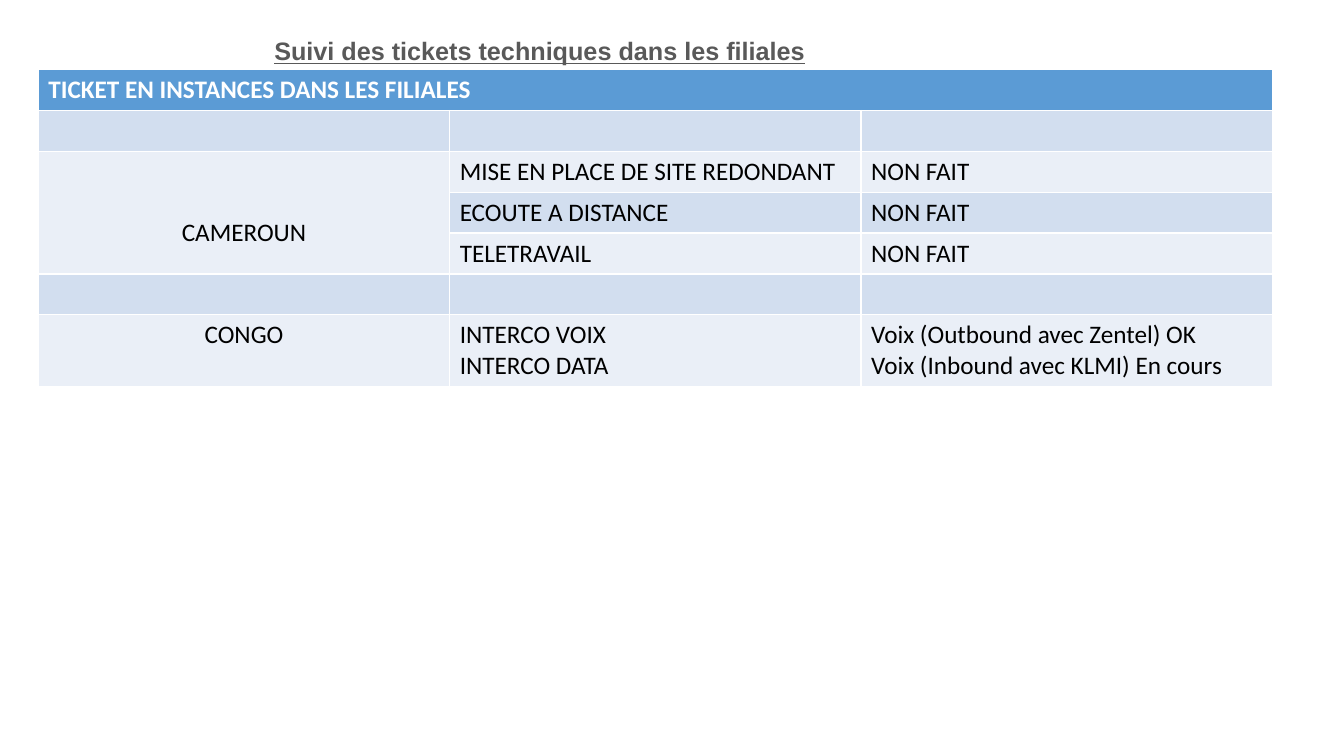
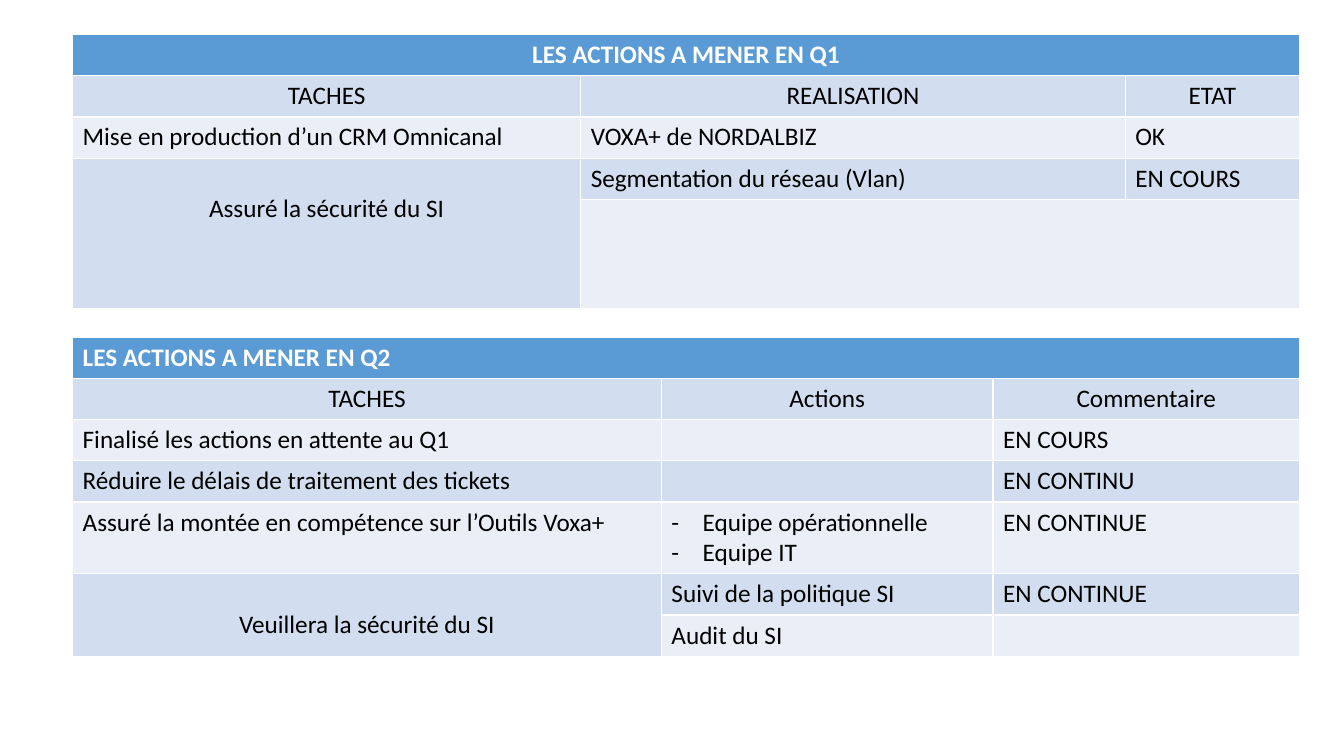
from dataclasses import dataclass
from lxml.etree import SubElement
from pptx import Presentation
from pptx.dml.color import RGBColor
from pptx.enum.text import MSO_ANCHOR, PP_ALIGN
from pptx.oxml.ns import qn
from pptx.util import Inches, Pt


@dataclass(frozen=True)
class Theme:
    """Hold the shared colours, fonts and sizes."""
    head: str = "5B9BD5"
    bands: tuple = ("EAEFF7", "D2DEEF")
    light: str = "FFFFFF"
    dark: str = "000000"
    grey: str = "595959"
    body: str = "Calibri"
    title: str = "Arial"
    size: float = 18
    pad: float = 0.05
    line: float = 0.305
    hang: float = 0.31


THEME = Theme()

SLIDES = [
    {
        "title": "Suivi des tickets techniques dans les filiales",
        "grids": [{
            "at": (0.38, 0.69),
            "cols": [4.08] * 3,
            "tall": [0.4] * 6 + [0.7],
            "rows": [
                ["TICKET EN INSTANCES DANS LES FILIALES", "", ""],
                ["", "", ""],
                ["CAMEROUN", "MISE EN PLACE DE SITE REDONDANT", "NON FAIT"],
                ["", "ECOUTE A DISTANCE", "NON FAIT"],
                ["", "TELETRAVAIL", "NON FAIT"],
                ["", "", ""],
                ["CONGO", "INTERCO VOIX\nINTERCO DATA",
                 "Voix (Outbound avec Zentel) OK\nVoix (Inbound avec KLMI) En cours"],
            ],
            "spans": [(0, 0, 0, 2), (2, 0, 4, 0)],
            "mid": [(2, 0), (6, 0)],
            "drop": {(2, 0): 2},
        }],
    },
    {
        "title": None,
        "grids": [
            {
                "at": (0.72, 0.34),
                "cols": [5.04, 5.4, 1.73],
                "tall": [0.41] * 4 + [1.08],
                "rows": [
                    ["LES ACTIONS A MENER EN Q1", "", ""],
                    ["TACHES", "REALISATION", "ETAT"],
                    ["Mise en production d’un CRM Omnicanal",
                     "VOXA+ de NORDALBIZ", "OK"],
                    ["Assuré la sécurité du SI",
                     "Segmentation du réseau (Vlan)", "EN COURS"],
                    ["", "", ""],
                ],
                "spans": [(0, 0, 0, 2), (3, 0, 4, 0), (4, 1, 4, 2)],
                "mid": [(0, 0), (1, 0), (1, 1), (1, 2), (3, 0)],
                "drop": {(3, 0): 1},
            },
            {
                "at": (0.72, 3.35),
                "cols": [5.84, 3.29, 3.04],
                "tall": [0.4, 0.4, 0.41, 0.41, 0.71, 0.41, 0.41],
                "rows": [
                    ["LES ACTIONS A MENER EN Q2", "", ""],
                    ["TACHES", "Actions", "Commentaire"],
                    ["Finalisé les actions en attente au Q1", "", "EN COURS"],
                    ["Réduire le délais de traitement des tickets", "", "EN CONTINU"],
                    ["Assuré la montée en compétence sur l’Outils Voxa+",
                     "Equipe opérationnelle\nEquipe IT", "EN CONTINUE"],
                    ["Veuillera la sécurité du SI",
                     "Suivi de la politique SI", "EN CONTINUE"],
                    ["", "Audit du SI", ""],
                ],
                "spans": [(0, 0, 0, 2), (5, 0, 6, 0)],
                "mid": [(1, 0), (1, 1), (1, 2), (5, 0)],
                "drop": {(5, 0): 1},
                "dash": [(4, 1)],
            },
        ],
    },
]


def style(font, face, color, bold):
    """Set the face, size, colour and weight of a font."""
    font.name, font.size, font.bold = face, Pt(THEME.size), bold
    font.color.rgb = RGBColor.from_string(color)


def add_dash(para):
    """Give a paragraph a hanging dash bullet."""
    props = para._p.get_or_add_pPr()
    props.set("marL", str(Inches(THEME.hang)))
    props.set("indent", str(-Inches(THEME.hang)))
    SubElement(props, qn("a:buFont")).set("typeface", THEME.body)
    SubElement(props, qn("a:buChar")).set("char", "-")


def fill_cell(cell, text, spot, grid):
    """Paint one cell and set its text."""
    head = spot[0] == 0
    cell.fill.solid()
    cell.fill.fore_color.rgb = RGBColor.from_string(
        THEME.head if head else THEME.bands[spot[0] % 2])
    drop = grid["drop"].get(spot, 0)
    cell.margin_top = Inches(THEME.pad + drop * THEME.line)
    cell.text_frame.text = text
    for para in cell.text_frame.paragraphs:
        if spot in grid.get("dash", []):
            add_dash(para)
        para.alignment = PP_ALIGN.CENTER if spot in grid["mid"] else PP_ALIGN.LEFT
        style(para.font, THEME.body, THEME.light if head else THEME.dark, head)
        for run in para.runs:
            style(run.font, THEME.body, THEME.light if head else THEME.dark, head)


def add_grid(slide, grid):
    """Add one table with its merged cells."""
    rows, cols, tall = grid["rows"], grid["cols"], grid["tall"]
    left, top = grid["at"]
    table = slide.shapes.add_table(
        len(rows), len(cols), Inches(left), Inches(top),
        Inches(sum(cols)), Inches(sum(tall))).table
    table.horz_banding = False
    for col, wide in zip(table.columns, cols):
        col.width = Inches(wide)
    for row, high in zip(table.rows, tall):
        row.height = Inches(high)
    for r, row in enumerate(rows):
        for c, text in enumerate(row):
            fill_cell(table.cell(r, c), text, (r, c), grid)
    for r, c, last, end in grid["spans"]:
        table.cell(r, c).merge(table.cell(last, end))


def set_title(shape, text):
    """Place and format the slide title."""
    shape.left, shape.top = Inches(2.62), Inches(0.3)
    shape.width, shape.height = Inches(5.52), Inches(0.4)
    frame = shape.text_frame
    frame.text = text
    frame.word_wrap = False
    frame.vertical_anchor = MSO_ANCHOR.MIDDLE
    para = frame.paragraphs[0]
    para.alignment = PP_ALIGN.LEFT
    font = para.runs[0].font
    style(font, THEME.title, THEME.grey, True)
    font.underline = True


def main():
    """Build the deck and save it."""
    deck = Presentation()
    deck.slide_width, deck.slide_height = Inches(13.33), Inches(7.5)
    for page in SLIDES:
        slide = deck.slides.add_slide(deck.slide_layouts[5 if page["title"] else 6])
        if page["title"]:
            set_title(slide.shapes.title, page["title"])
        for grid in page["grids"]:
            add_grid(slide, grid)
    deck.save("out.pptx")


if __name__ == "__main__":
    main()
